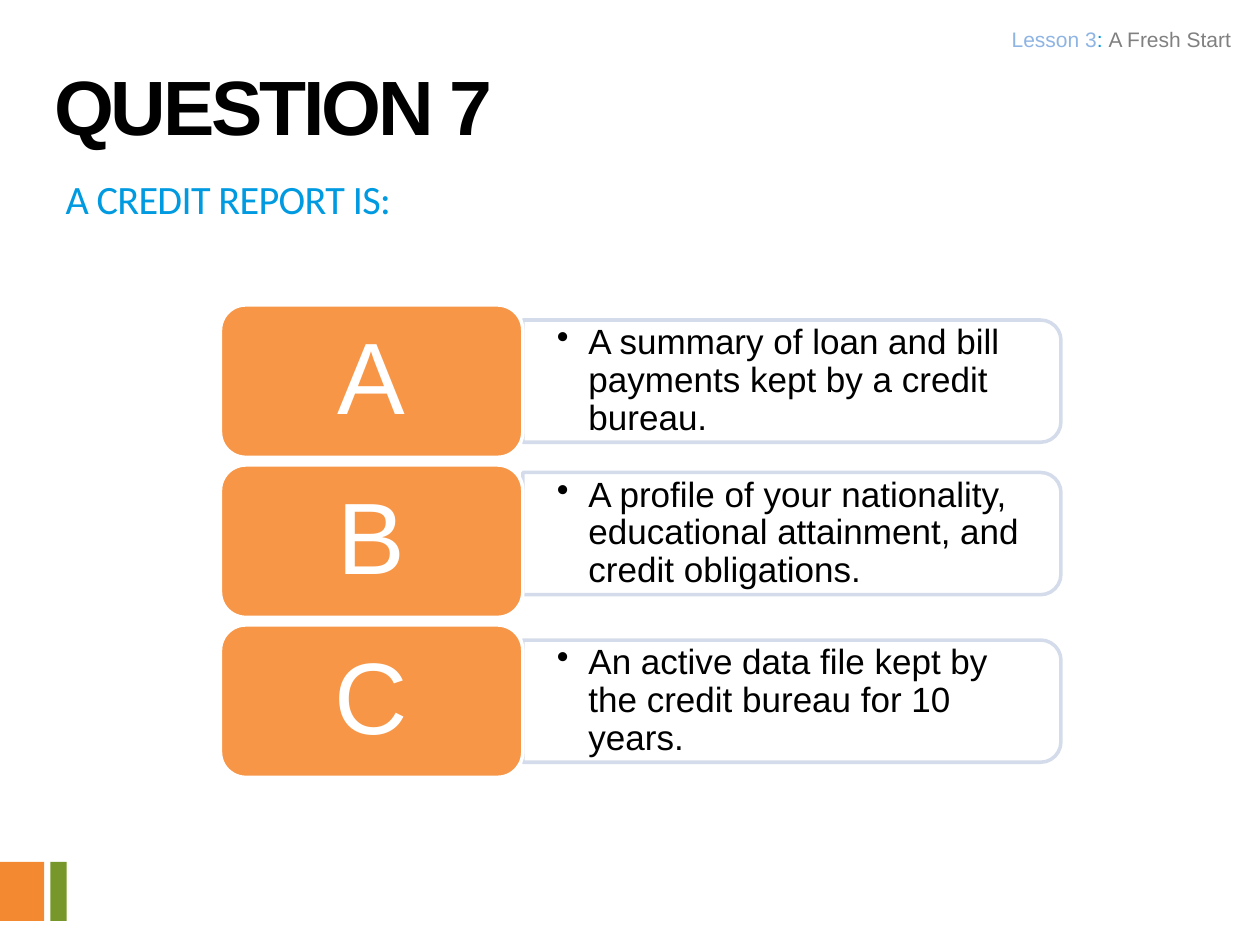
from collections import namedtuple
from dataclasses import dataclass

from lxml.etree import SubElement
from pptx import Presentation
from pptx.dml.color import RGBColor as RGB
from pptx.enum.shapes import MSO_SHAPE as SHAPE
from pptx.enum.text import MSO_ANCHOR as ANCHOR, PP_ALIGN as ALIGN
from pptx.oxml.ns import qn
from pptx.util import Pt

Box = namedtuple("Box", "x y w h")


@dataclass(frozen=True)
class Theme:
    heading: str = "Arial"
    body: str = "Calibri"
    black: str = "000000"
    white: str = "FFFFFF"
    blue: str = "009AE1"
    pale_blue: str = "8EB4E3"
    grey: str = "808080"
    card: str = "F79646"
    panel_line: str = "D0D8E8"
    orange: str = "F38A31"
    green: str = "77972B"
    title_size: int = 44
    prompt_size: int = 23
    letter_size: int = 58
    answer_size: int = 20
    lesson_size: int = 12


T = Theme()
ANSWERS = [
    ("A", "A summary of loan and bill payments kept by a credit bureau.", 8.64),
    ("B", "A profile of your nationality, educational attainment, and credit obligations.", 4.32),
    ("C", "An active data file kept by the credit bureau for 10 years.", 8.64),
]


def set_attrs(obj, **values):
    for name, value in values.items():
        setattr(obj, name, value)


def place(sp, box):
    set_attrs(sp, left=Pt(box.x), top=Pt(box.y), width=Pt(box.w), height=Pt(box.h))


def add_run(p, text, size, color, font=T.heading, bold=False, spacing=0):
    r = p.add_run()
    r.text = text
    set_attrs(r.font, name=font, size=Pt(size), bold=bold)
    r.font.color.rgb = RGB.from_string(color)
    if spacing:
        r.font._element.set("spc", str(round(spacing * 100)))


def format_frame(tf, anchor=ANCHOR.TOP, inset_x=7.2, inset_y=3.6):
    set_attrs(tf, word_wrap=True, vertical_anchor=anchor,
              margin_left=Pt(inset_x), margin_right=Pt(inset_x),
              margin_top=Pt(inset_y), margin_bottom=Pt(inset_y))
    return tf.paragraphs[0]


def add_text_box(s, box, **frame):
    sp = s.shapes.add_textbox(*map(Pt, box))
    return format_frame(sp.text_frame, **frame)


def set_bullet(p, indent=0, char=None):
    pPr = p._p.get_or_add_pPr()
    pPr.set("marL", str(Pt(indent)))
    pPr.set("indent", str(-Pt(indent)))
    if char:
        SubElement(pPr, qn("a:buChar")).set("char", char)
    else:
        SubElement(pPr, qn("a:buNone"))


def add_block(s, kind, box, fill, line=None):
    sp = s.shapes.add_shape(kind, *map(Pt, box))
    sp.shadow.inherit = False
    sp.fill.solid()
    sp.fill.fore_color.rgb = RGB.from_string(fill)
    if line:
        sp.line.color.rgb = RGB.from_string(line)
        sp.line.width = Pt(2)
    else:
        sp.line.fill.background()
    return sp


def add_title(s, box):
    sp = s.shapes.title
    place(sp, box)
    p = format_frame(sp.text_frame)
    set_attrs(p, alignment=ALIGN.LEFT, line_spacing=Pt(59))
    add_run(p, "QUESTION 7", T.title_size, T.black, bold=True, spacing=-1.8)


def add_prompt(s, box):
    sp = s.placeholders[1]
    place(sp, box)
    p = format_frame(sp.text_frame)
    set_bullet(p)
    p.space_before = Pt(0)
    add_run(p, "A CREDIT REPORT IS:", T.prompt_size, T.blue, T.body, spacing=-0.4)


def add_lesson(s, box):
    p = add_text_box(s, box, inset_x=5.76, inset_y=2.88)
    p.alignment = ALIGN.RIGHT
    for text, color in [("Lesson 3", T.pale_blue), (": ", T.blue), ("A Fresh Start", T.grey)]:
        add_run(p, text, T.lesson_size, color)


def add_panel(s, box, text):
    upright = Box(box.x + (box.w - box.h) / 2, box.y + (box.h - box.w) / 2, box.h, box.w)
    sp = add_block(s, SHAPE.ROUND_2_SAME_RECTANGLE, upright, T.white, T.panel_line)
    sp.rotation = 90
    for color in sp._element.spPr.iter(qn("a:srgbClr")):
        SubElement(color, qn("a:alpha")).set("val", "90000")
    p = add_text_box(s, Box(box.x, box.y + 3.6, box.w - 3.6, box.h - 7.2),
                     anchor=ANCHOR.MIDDLE, inset_x=19.44, inset_y=10.08)
    set_bullet(p, 18, "•")
    set_attrs(p, level=1, line_spacing=0.9)
    add_run(p, text, T.answer_size, T.black)


def add_answer(s, box, letter, text, panel_drop):
    card_w = 172.8
    add_panel(s, Box(box.x + card_w, box.y + panel_drop, box.w - card_w, 69.84), text)
    card = add_block(s, SHAPE.ROUNDED_RECTANGLE, Box(box.x, box.y, card_w, box.h), T.card, T.white)
    p = format_frame(card.text_frame, ANCHOR.MIDDLE, 21.6, 12.96)
    set_attrs(p, alignment=ALIGN.CENTER, line_spacing=0.9)
    add_run(p, letter, T.letter_size, T.white)


def add_answers(s, box, pitch=91.44):
    card_h = box.h - pitch * (len(ANSWERS) - 1)
    for i, answer in enumerate(ANSWERS):
        add_answer(s, Box(box.x, box.y + i * pitch, box.w, card_h), *answer)


def add_corner(s, box):
    bar_w = 9.36
    add_block(s, SHAPE.RECTANGLE, Box(box.x, box.y, 25.2, box.h), T.orange)
    add_block(s, SHAPE.RECTANGLE, Box(box.x + box.w - bar_w, box.y, bar_w, box.h), T.green)


def main():
    prs = Presentation()
    set_attrs(prs, slide_width=Pt(720), slide_height=Pt(540))
    s = prs.slides.add_slide(prs.slide_layouts[1])
    add_corner(s, Box(0, 492.48, 38.16, 33.84))
    add_prompt(s, Box(30.24, 95.76, 684, 108))
    add_answers(s, Box(126, 174.24, 480.24, 270))
    add_lesson(s, Box(288, 12.24, 421.2, 23.04))
    add_title(s, Box(23.76, 23.76, 623.52, 59.76))
    prs.save("out.pptx")


if __name__ == "__main__":
    main()
